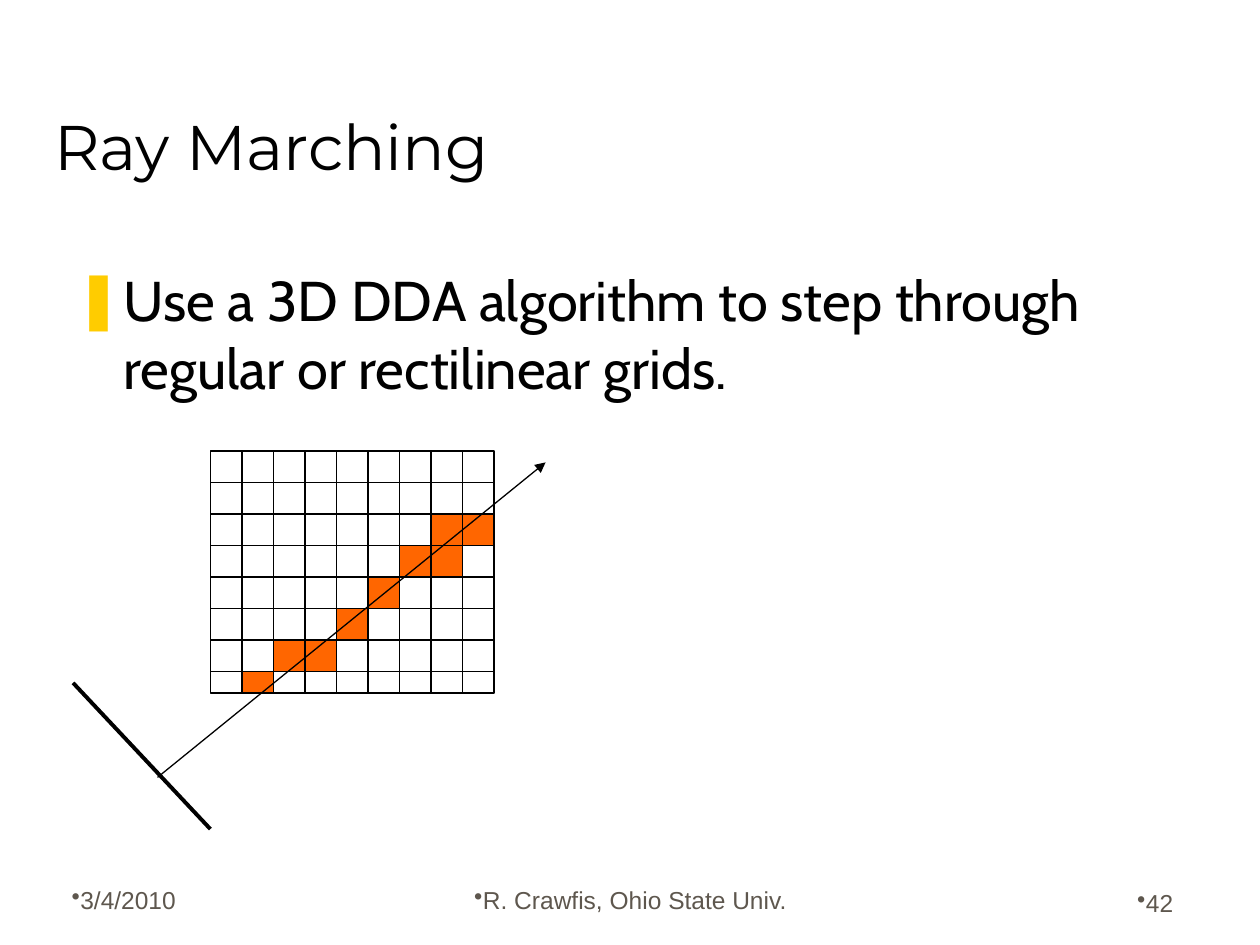
import pptx
import pptx.dml.color
import pptx.enum.shapes
import pptx.enum.text
import pptx.oxml.ns
import pptx.util
from lxml import etree

Inches = pptx.util.Inches
Pt = pptx.util.Pt
RGBColor = pptx.dml.color.RGBColor
ALIGN = pptx.enum.text.PP_ALIGN
ANCHOR = pptx.enum.text.MSO_ANCHOR
qn = pptx.oxml.ns.qn

BLACK = RGBColor(0x00, 0x00, 0x00)
ORANGE = RGBColor(0xFF, 0x66, 0x00)
YELLOW = RGBColor(0xFF, 0xCC, 0x00)
GRAY = RGBColor(0x5E, 0x57, 0x4E)

CELL = 0.25
HIT_CELLS = [(8, 2), (7, 2), (7, 3), (6, 3), (5, 4), (4, 5), (3, 6), (2, 6), (1, 7)]


def place(sp, box):
    sp.left, sp.top, sp.width, sp.height = [Inches(v) for v in box]


def add_bullet(p, char, indent=0, color=None):
    pPr = p._p.get_or_add_pPr()
    pPr.set("marL", str(Inches(indent)))
    pPr.set("indent", str(-Inches(indent)))
    if color is not None:
        buClr = etree.SubElement(pPr, qn("a:buClr"))
        etree.SubElement(buClr, qn("a:srgbClr")).set("val", str(color))
    etree.SubElement(pPr, qn("a:buChar")).set("char", char)


def add_run(p, text, font, size, color):
    r = p.add_run()
    r.text = text
    r.font.name = font
    r.font.size = Pt(size)
    r.font.color.rgb = color


def format_frame(sp, anchor):
    tf = sp.text_frame
    tf.word_wrap = True
    tf.auto_size = pptx.enum.text.MSO_AUTO_SIZE.NONE
    tf.vertical_anchor = anchor
    p = tf.paragraphs[0]
    p.space_before = Pt(0)
    return p


def add_title(s, box):
    place(s.shapes.title, box)
    p = format_frame(s.shapes.title, ANCHOR.BOTTOM)
    p.alignment = ALIGN.LEFT
    add_run(p, "Ray Marching", "Montserrat", 36, BLACK)


def add_body(s, box):
    sp = s.placeholders[1]
    place(sp, box)
    p = format_frame(sp, ANCHOR.TOP)
    add_bullet(p, "❚", 0.38, YELLOW)
    add_run(p, "Use a 3D DDA algorithm to step through regular or rectilinear grids.",
            "Cabin", 32, BLACK)


def add_footer(s, box, text, align):
    sp = s.shapes.add_textbox(*[Inches(v) for v in box])
    p = format_frame(sp, ANCHOR.BOTTOM)
    p.alignment = align
    add_bullet(p, "•")
    add_run(p, text, "Arial", 14, GRAY)


def add_rect(shapes, box, fill=None):
    sp = shapes.add_shape(pptx.enum.shapes.MSO_SHAPE.RECTANGLE, *[Inches(v) for v in box])
    sp.shadow.inherit = False
    if fill is None:
        sp.fill.background()
    else:
        sp.fill.solid()
        sp.fill.fore_color.rgb = fill
    sp.line.color.rgb = BLACK
    sp.line.width = Pt(0.75)


def add_line(shapes, start, end, width=0.75, arrow=False):
    cn = shapes.add_connector(pptx.enum.shapes.MSO_CONNECTOR.STRAIGHT,
                              *[Inches(v) for v in (*start, *end)])
    cn.line.color.rgb = BLACK
    cn.line.width = Pt(width)
    if arrow:
        etree.SubElement(cn.line._get_or_add_ln(), qn("a:tailEnd")).set("type", "triangle")
    etree.SubElement(cn._element.spPr, qn("a:effectLst"))


def add_grid(s, box):
    left, top, width, height = box
    right, bottom = left + width, top + height
    for col, row in HIT_CELLS:
        y = top + row * CELL
        add_rect(s.shapes, (left + col * CELL, y, CELL, min(CELL, bottom - y)), ORANGE)
    grid = s.shapes.add_group_shape().shapes
    add_rect(grid, box)
    for i in range(1, 9):
        x = left + i * CELL
        add_line(grid, (x, top), (x, bottom))
    for i in range(1, 8):
        y = top + i * CELL
        add_line(grid, (left, y), (right, y))


def add_ray(s, box):
    left, top, width, height = box
    add_line(s.shapes, (left, top + 1.75), (left + 1.09, top + height), 2.25)
    add_line(s.shapes, (left + 0.67, top + 2.5), (left + width, top), arrow=True)


def main():
    prs = pptx.Presentation()
    prs.slide_width, prs.slide_height = Inches(10), Inches(7.5)
    s = prs.slides.add_slide(prs.slide_layouts[1])
    add_title(s, (0.33, 0.25, 9.33, 1.25))
    add_body(s, (0.5, 2.06, 8.94, 4.56))
    add_grid(s, (1.67, 3.58, 2.25, 1.92))
    add_ray(s, (0.58, 3.67, 3.75, 2.91))
    add_footer(s, (0.47, 6.81, 2.08, 0.5), "3/4/2010", ALIGN.LEFT)
    add_footer(s, (3.42, 6.81, 3.17, 0.5), "R. Crawfis, Ohio State Univ.", ALIGN.CENTER)
    add_footer(s, (7.33, 6.83, 2.08, 0.5), "42", ALIGN.RIGHT)
    prs.save("out.pptx")


if __name__ == "__main__":
    main()
